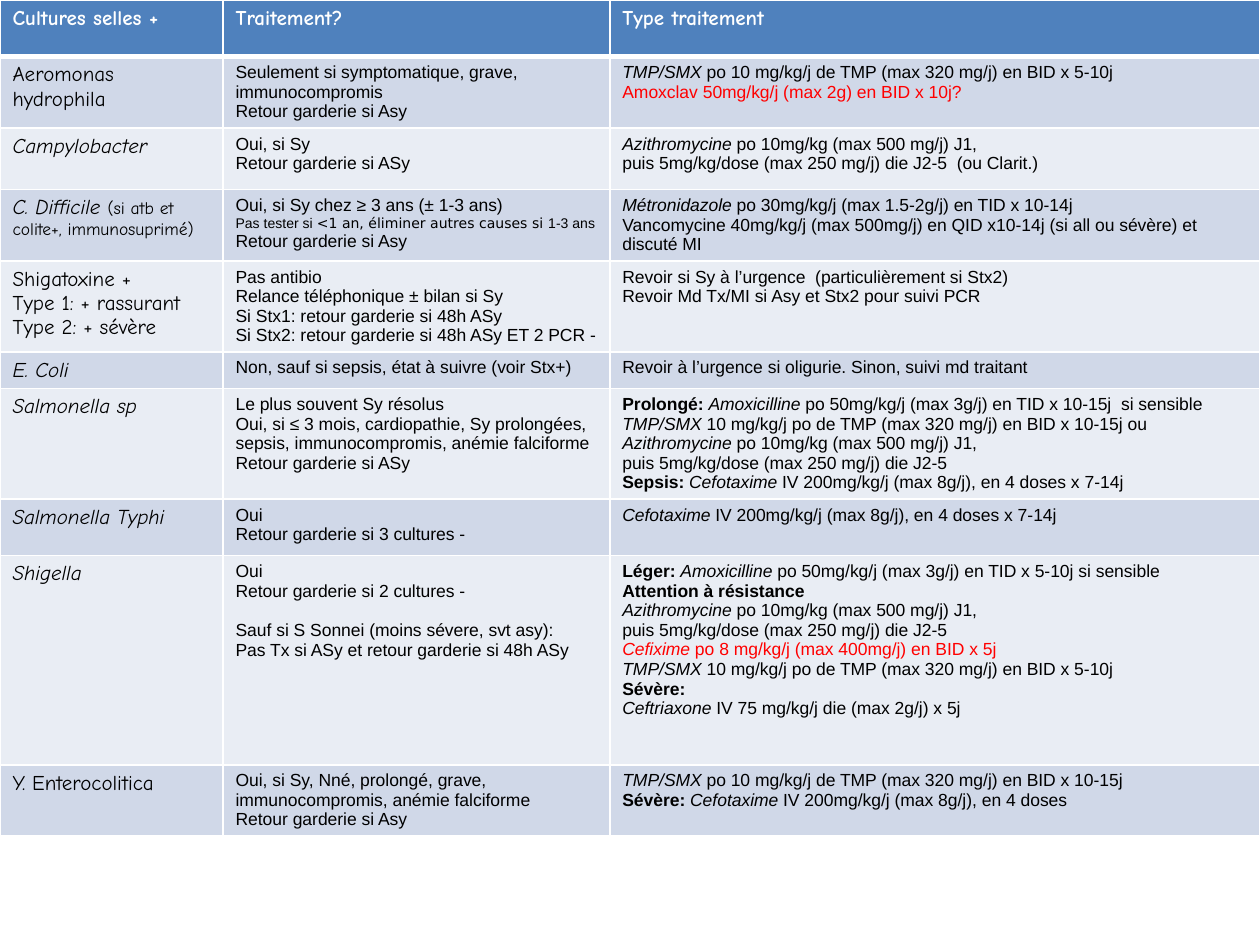
from typing import NamedTuple, Optional

from lxml import etree
from pptx import Presentation
from pptx.dml.color import RGBColor
from pptx.oxml import ns
from pptx.util import Inches, Pt

WHITE = RGBColor(0xFF, 0xFF, 0xFF)
BLACK = RGBColor(0x00, 0x00, 0x00)
RED = RGBColor(0xFF, 0x00, 0x00)
HEADER_BLUE = RGBColor(0x4F, 0x81, 0xBD)
BANDS = (RGBColor(0xE9, 0xED, 0xF4), RGBColor(0xD0, 0xD8, 0xE8))
NAME_FONT, BODY_FONT, NOTE_FONT = "Comic Neue", "Arial", "DejaVu Sans"
COL_WIDTHS = (1.77, 3.07, 5.16)
ROW_HEIGHTS = (0.45, 0.49, 0.49, 0.45, 0.45, 0.29, 0.55, 0.45, 1.66, 0.55)


class Run(NamedTuple):
    text: str
    bold: bool = False
    italic: bool = False
    color: Optional[RGBColor] = None
    size: Optional[float] = None
    font: Optional[str] = None


class Para(NamedTuple):
    runs: list[Run]
    before: float = 0


class Culture(NamedTuple):
    name: list[Para]
    treatment: list[Para]
    kind: list[Para]


def line(*parts: str | Run, before: float = 0) -> Para:
    return Para([Run(x) if isinstance(x, str) else x for x in parts], before)


def lines(*texts: str) -> list[Para]:
    return [line(t) for t in texts]


def bold(text: str) -> Run:
    return Run(text, bold=True)


def drug(name: str, dose: str, label: str = "", color: Optional[RGBColor] = None) -> Para:
    """Optional bold label, italic drug name, plain dosage."""
    runs = [bold(label)] if label else []
    return Para(runs + [Run(name, italic=True, color=color), Run(dose, color=color)])


def species(name: str) -> list[Para]:
    return [line(Run(name, italic=True))]


AZITHRO = [
    drug("Azithromycine", " po 10mg/kg (max 500 mg/j) J1,"),
    line("puis 5mg/kg/dose (max 250 mg/j) die J2-5"),
]
CEFOTAXIME = " IV 200mg/kg/j (max 8g/j), en 4 doses"

HEADER = Culture(*(lines(t) for t in ("Cultures selles +", "Traitement?", "Type traitement")))
CULTURES = [
    Culture(
        lines("Aeromonas hydrophila"),
        lines("Seulement si symptomatique, grave, immunocompromis", "Retour garderie si Asy"),
        [drug("TMP/SMX ", "po 10 mg/kg/j de TMP (max 320 mg/j) en BID x 5-10j"),
         line(Run("Amoxclav 50mg/kg/j (max 2g) en BID x 10j?", color=RED))],
    ),
    Culture(
        species("Campylobacter"),
        lines("Oui, si Sy", "Retour garderie si ASy"),
        [AZITHRO[0], line("puis 5mg/kg/dose (max 250 mg/j) die J2-5  (ou Clarit.)")],
    ),
    Culture(
        [line(Run("C. Difficile ", italic=True),
              Run("(si atb et colite+, immunosuprimé)", size=10))],
        [line("Oui, si Sy chez ≥ 3 ans (± 1-3 ans)"),
         line(Run("Pas tester si ", size=8),
              Run("<1 an, éliminer autres causes si ", size=8, font=NOTE_FONT),
              Run("1-3 ans ", size=8),
              "Retour garderie si Asy")],
        [drug("Métronidazole", " po 30mg/kg/j (max 1.5-2g/j) en TID x 10-14j"),
         line("Vancomycine 40mg/kg/j (max 500mg/j) en QID x10-14j (si all ou sévère) et discuté MI")],
    ),
    Culture(
        lines("Shigatoxine +", "Type 1: + rassurant", "Type 2: + sévère"),
        lines("Pas antibio", "Relance téléphonique ± bilan si Sy",
              "Si Stx1: retour garderie si 48h ASy",
              "Si Stx2: retour garderie si 48h ASy ET 2 PCR -"),
        lines("Revoir si Sy à l’urgence  (particulièrement si Stx2)",
              "Revoir Md Tx/MI si Asy et Stx2 pour suivi PCR"),
    ),
    Culture(
        species("E. Coli"),
        lines("Non, sauf si sepsis, état à suivre (voir Stx+)"),
        lines("Revoir à l’urgence si oligurie. Sinon, suivi md traitant"),
    ),
    Culture(
        species("Salmonella sp"),
        lines("Le plus souvent Sy résolus",
              "Oui, si ≤ 3 mois, cardiopathie, Sy prolongées, sepsis, "
              "immunocompromis, anémie falciforme",
              "Retour garderie si ASy"),
        [drug("Amoxicilline", " po 50mg/kg/j (max 3g/j) en TID x 10-15j  si sensible", "Prolongé: "),
         drug("TMP/SMX ", "10 mg/kg/j po de TMP (max 320 mg/j) en BID x 10-15j ou"),
         *AZITHRO,
         drug("Cefotaxime", CEFOTAXIME + " x 7-14j", "Sepsis: ")],
    ),
    Culture(
        species("Salmonella Typhi"),
        lines("Oui", "Retour garderie si 3 cultures -"),
        [drug("Cefotaxime", CEFOTAXIME + " x 7-14j")],
    ),
    Culture(
        species("Shigella"),
        [*lines("Oui", "Retour garderie si 2 cultures -"),
         line("Sauf si S Sonnei (moins sévere, svt asy):", before=11.5),
         line("Pas Tx si ASy et retour garderie si 48h ASy")],
        [drug("Amoxicilline", " po 50mg/kg/j (max 3g/j) en TID x 5-10j si sensible", "Léger: "),
         line(bold("Attention à résistance")),
         *AZITHRO,
         drug("Cefixime", " po 8 mg/kg/j (max 400mg/j) en BID x 5j", color=RED),
         drug("TMP/SMX ", "10 mg/kg/j po de TMP (max 320 mg/j) en BID x 5-10j"),
         line(bold("Sévère:")),
         drug("Ceftriaxone", " IV 75 mg/kg/j die (max 2g/j) x 5j")],
    ),
    Culture(
        lines("Y. Enterocolitica"),
        lines("Oui, si Sy, Nné, prolongé, grave, immunocompromis, anémie falciforme",
              "Retour garderie si Asy"),
        [drug("TMP/SMX ", "po 10 mg/kg/j de TMP (max 320 mg/j) en BID x 10-15j"),
         drug("Cefotaxime", CEFOTAXIME, "Sévère: ")],
    ),
]


def set_borders(cell, top: float, bottom: float) -> None:
    """White borders; must be set before the fill, as the schema orders them."""
    tc_pr = cell._tc.get_or_add_tcPr()
    for side, width in (("L", 1), ("R", 1), ("T", top), ("B", bottom)):
        ln = etree.SubElement(tc_pr, ns.qn(f"a:ln{side}"), w=str(Pt(width)))
        fill = etree.SubElement(ln, ns.qn("a:solidFill"))
        etree.SubElement(fill, ns.qn("a:srgbClr"), val=str(WHITE))


def write_cell(cell, paras: list[Para], font: str, size: float, color: RGBColor,
               header: bool) -> None:
    tf = cell.text_frame
    for n, para in enumerate(paras):
        p = tf.add_paragraph() if n else tf.paragraphs[0]
        if para.before:
            p.space_before = Pt(para.before)
        for run in para.runs:
            r = p.add_run()
            r.text = run.text
            r.font.name = run.font or font
            r.font.size = Pt(run.size or size)
            r.font.bold = header or run.bold
            r.font.italic = run.italic
            r.font.color.rgb = run.color or color


def add_culture_table(s) -> None:
    rows = [HEADER, *CULTURES]
    frame = s.shapes.add_table(len(rows), len(COL_WIDTHS), 0, 0, Inches(10), Inches(6.9))
    table = frame.table
    for column, width in zip(table.columns, COL_WIDTHS):
        column.width = Inches(width)
    for row, height in zip(table.rows, ROW_HEIGHTS):
        row.height = Inches(height)
    frame.height = Inches(6.9)

    for i, culture in enumerate(rows):
        header = i == 0
        for j, paras in enumerate(culture):
            cell = table.cell(i, j)
            set_borders(cell, top=3 if i == 1 else 1, bottom=3 if header else 1)
            cell.fill.solid()
            cell.fill.fore_color.rgb = HEADER_BLUE if header else BANDS[i % 2]
            font, size = (NAME_FONT, 12) if header or j == 0 else (BODY_FONT, 10)
            write_cell(cell, paras, font, size, WHITE if header else BLACK, header)


def main() -> None:
    prs = Presentation()
    prs.slide_width, prs.slide_height = Inches(10), Inches(7.5)
    s = prs.slides.add_slide(prs.slide_layouts[6])
    add_culture_table(s)
    prs.save("out.pptx")


if __name__ == "__main__":
    main()
